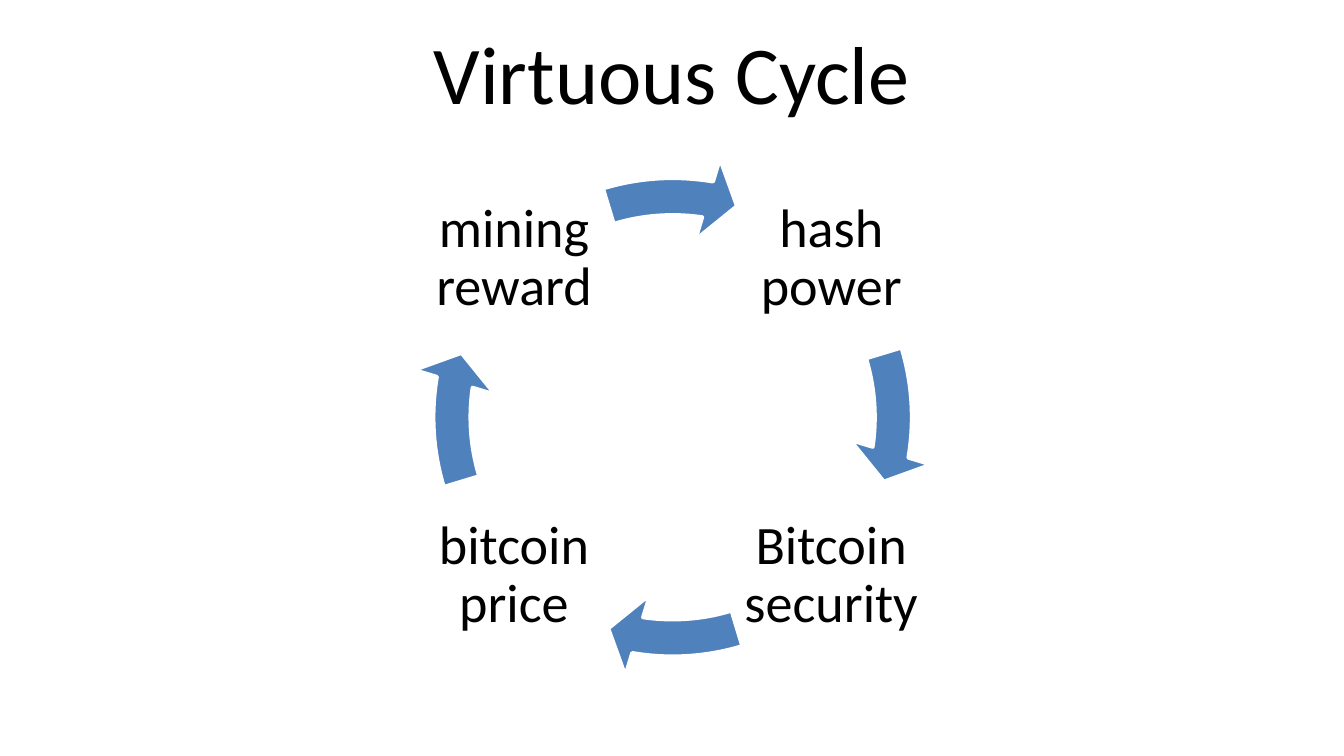
from pptx import Presentation
from pptx.dml.color import RGBColor
from pptx.enum.shapes import MSO_SHAPE
from pptx.enum.text import MSO_ANCHOR, PP_ALIGN
from pptx.util import Inches, Pt

FONT = "Calibri"
BLACK, WHITE, BLUE = "000000", "FFFFFF", "4F81BD"
# Clockwise from top right: column, row, wording
STEPS = [
    (1, 0, "hash power"),
    (1, 1, "Bitcoin security"),
    (0, 1, "bitcoin price"),
    (0, 0, "mining reward"),
]
# Arrow angles are in units of 100000/60000 degree
FULL, QUARTER = 216, 54


def color(code):
    return RGBColor.from_string(code)


def write(frame, text, size):
    frame.text = text
    frame.word_wrap = True
    frame.vertical_anchor = MSO_ANCHOR.MIDDLE
    para = frame.paragraphs[0]
    para.alignment = PP_ALIGN.CENTER
    font = para.runs[0].font
    font.name, font.size = FONT, Pt(size)
    font.color.rgb = color(BLACK)
    return para


def add_title(slide, text, left, top, width, height):
    title = slide.shapes.title
    title.left, title.top = Inches(left), Inches(top)
    title.width, title.height = Inches(width), Inches(height)
    write(title.text_frame, text, 44)


def add_label(group, text, left, top, size):
    box = group.shapes.add_textbox(
        Inches(left), Inches(top), Inches(size), Inches(size))
    frame = box.text_frame
    frame.margin_left = frame.margin_right = Inches(0.04)
    frame.margin_top = frame.margin_bottom = Inches(0.04)
    write(frame, text, 29).line_spacing = 0.9


def add_arrow(group, turn, left, top, size):
    """Add the arc that leads on from the given quarter turn."""
    arrow = group.shapes.add_shape(
        MSO_SHAPE.CIRCULAR_ARROW,
        Inches(left), Inches(top), Inches(size), Inches(size))
    shift = turn * QUARTER
    values = (0.07, 4.66, 5.49 + shift, (205.86 + shift) % FULL, 0.08)
    for index, value in enumerate(values):
        arrow.adjustments[index] = value
    arrow.shadow.inherit = False
    arrow.fill.solid()
    arrow.fill.fore_color.rgb = color(BLUE)
    arrow.line.color.rgb = color(WHITE)
    arrow.line.width = Pt(2)


def add_cycle(slide, steps, left, top, size):
    group = slide.shapes.add_group_shape()
    side, inset = 1.39, 0.08
    pitch = size - side - 2 * inset
    for turn, (col, row, text) in enumerate(steps):
        add_label(group, text, left + inset + col * pitch,
                  top + inset + row * pitch, side)
        add_arrow(group, turn, left, top, size)


def main():
    deck = Presentation()
    deck.slide_width = Inches(10)
    deck.slide_height = deck.slide_width * 9 // 16
    slide = deck.slides.add_slide(deck.slide_layouts[5])
    add_title(slide, "Virtuous Cycle", 0.5, 0.06, 9, 0.94)
    add_cycle(slide, STEPS, 3.05, 1.15, 3.91)
    deck.save("out.pptx")


if __name__ == "__main__":
    main()
